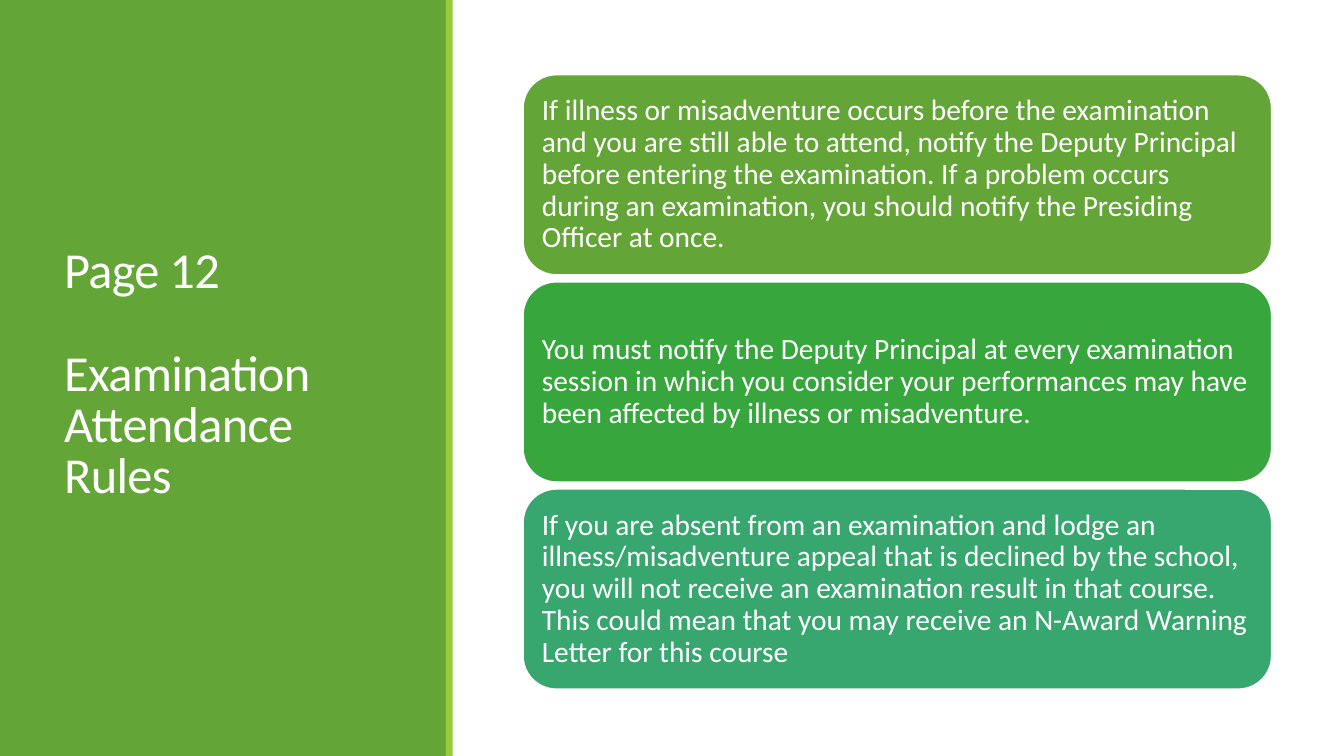
from dataclasses import dataclass

from pptx import Presentation
from pptx.dml.color import RGBColor
from pptx.enum.shapes import MSO_SHAPE as Preset
from pptx.enum.text import MSO_ANCHOR as Anchor, PP_ALIGN as Align
from pptx.util import Cm, Pt


@dataclass(frozen=True)
class Theme:
    font: str = "Calibri"
    white: str = "FFFFFF"
    panel: str = "63A537"
    stripe: str = "99CB38"
    cards: tuple = ("63A537", "37A63D", "37A76F")
    title_size: int = 36
    card_size: int = 21


THEME = Theme()
SLIDE_WIDTH, SLIDE_HEIGHT = 33.87, 19.05
CARD_LEFT, CARD_TOP, CARD_WIDTH, CARD_HEIGHT = 13.18, 1.88, 18.87, 5.05
CARD_PITCH = 5.22

TITLE_LINES = ("Page 12", "Examination Attendance Rules")
RULES = (
    "If illness or misadventure occurs before the examination and you are "
    "still able to attend, notify the Deputy Principal before entering the "
    "examination. If a problem occurs during an examination, you should "
    "notify the Presiding Officer at once.",
    "You must notify the Deputy Principal at every examination session in "
    "which you consider your performances may have been affected by illness "
    "or misadventure.",
    "If you are absent from an examination and lodge an illness/misadventure "
    "appeal that is declined by the school, you will not receive an "
    "examination result in that course. This could mean that you may receive "
    "an N-Award Warning Letter for this course",
)


def add_block(slide, preset, left, top, width, height, color):
    """Add a filled shape without outline or shadow; lengths in cm."""
    shape = slide.shapes.add_shape(
        preset, Cm(left), Cm(top), Cm(width), Cm(height))
    shape.shadow.inherit = False
    shape.fill.solid()
    shape.fill.fore_color.rgb = RGBColor.from_string(color)
    shape.line.fill.background()
    return shape


def write_run(paragraph, text, size, line_spacing):
    paragraph.alignment = Align.LEFT
    paragraph.line_spacing = line_spacing
    run = paragraph.add_run()
    run.text = text
    run.font.name = THEME.font
    run.font.size = Pt(size)
    run.font.color.rgb = RGBColor.from_string(THEME.white)
    return run


def add_title(slide, lines):
    box = slide.shapes.add_textbox(Cm(1.37), Cm(1.45), Cm(8.56), Cm(16.03))
    frame = box.text_frame
    frame.word_wrap = True
    frame.vertical_anchor = Anchor.MIDDLE
    for index, line in enumerate(lines):
        paragraph = frame.add_paragraph() if index else frame.paragraphs[0]
        paragraph.space_before = Pt(37 if index else 0)
        run = write_run(paragraph, line, THEME.title_size, 0.85)
        run.font._element.set("spc", "-50")


def add_card(slide, top, color, text):
    card = add_block(slide, Preset.ROUNDED_RECTANGLE,
                     CARD_LEFT, top, CARD_WIDTH, CARD_HEIGHT, color)
    card.line.color.rgb = RGBColor.from_string(THEME.white)
    card.line.width = Pt(1.25)
    frame = card.text_frame
    frame.word_wrap = True
    frame.vertical_anchor = Anchor.MIDDLE
    frame.margin_left = frame.margin_right = Cm(0.23)
    frame.margin_top = frame.margin_bottom = Cm(0.23)
    write_run(frame.paragraphs[0], text, THEME.card_size, 0.9)


def main():
    presentation = Presentation()
    presentation.slide_width = Cm(SLIDE_WIDTH)
    presentation.slide_height = Cm(SLIDE_HEIGHT)
    slide = presentation.slides.add_slide(presentation.slide_layouts[6])

    add_block(slide, Preset.RECTANGLE, 0, 0, 11.25, SLIDE_HEIGHT, THEME.panel)
    add_title(slide, TITLE_LINES)
    add_block(slide, Preset.RECTANGLE,
              11.23, 0, 0.18, SLIDE_HEIGHT, THEME.stripe)
    for index, (color, rule) in enumerate(zip(THEME.cards, RULES)):
        add_card(slide, CARD_TOP + index * CARD_PITCH, color, rule)

    presentation.save("out.pptx")


if __name__ == "__main__":
    main()
